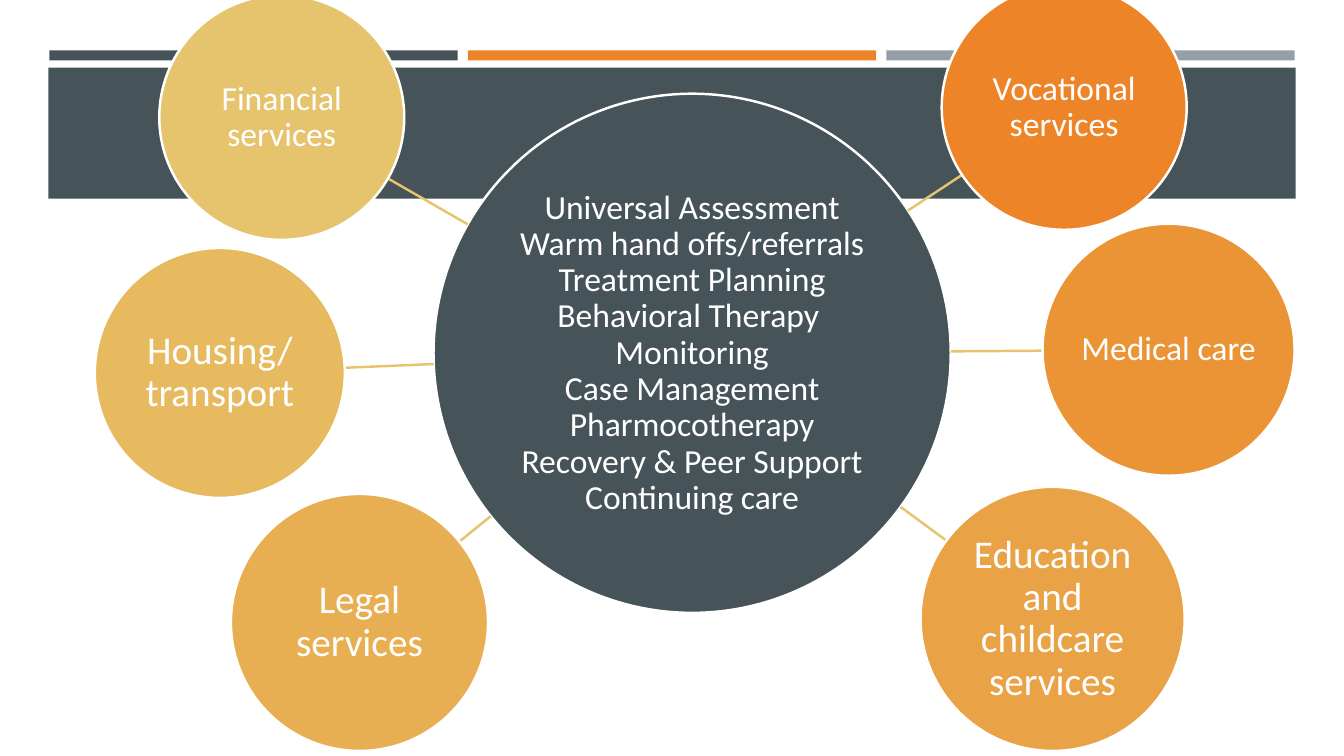
"""Build a slide of support services arranged around a central care hub."""
from dataclasses import dataclass
from math import hypot

from lxml.etree import SubElement
from pptx import Presentation
from pptx.dml.color import RGBColor
from pptx.enum.shapes import MSO_CONNECTOR as Connector, MSO_SHAPE as Preset
from pptx.enum.text import MSO_ANCHOR as Anchor, PP_ALIGN as Align
from pptx.oxml.ns import qn
from pptx.shapes.autoshape import Shape
from pptx.slide import Slide
from pptx.util import Inches, Pt

SLATE, ORANGE, GRAY, GOLD, WHITE = "465359", "ED8428", "969FA7", "E6C46D", "FFFFFF"
OUTLINE = Pt(1.75)
INSET = Inches(0.02)
FRAME_FORMAT = {
    "word_wrap": True,
    "vertical_anchor": Anchor.MIDDLE,
    "margin_left": INSET,
    "margin_right": INSET,
    "margin_top": INSET,
    "margin_bottom": INSET,
}
PARAGRAPH_FORMAT = {"alignment": Align.CENTER, "line_spacing": 0.9}


@dataclass(frozen=True)
class Bubble:
    left: float
    top: float
    width: float
    height: float
    color: str
    size: int
    lines: tuple[str, ...]

    @property
    def center(self) -> tuple[float, float]:
        return self.left + self.width / 2, self.top + self.height / 2

    def edge_toward(self, other: "Bubble") -> tuple[float, float]:
        x, y = self.center
        dx, dy = other.center[0] - x, other.center[1] - y
        reach = hypot(dx / (self.width / 2), dy / (self.height / 2))
        return x + dx / reach, y + dy / reach


def service(left: float, top: float, diameter: float, color: str, size: int, label: str) -> Bubble:
    return Bubble(left, top, diameter, diameter, color, size, (label,))


HUB = Bubble(4.3, 0.93, 5.13, 5.15, SLATE, 24, (
    "Universal Assessment",
    "Warm hand offs/referrals",
    "Treatment Planning",
    "Behavioral Therapy ",
    "Monitoring",
    "Case Management Pharmocotherapy",
    "Recovery & Peer Support",
    "Continuing care",
))
SERVICES = (
    service(9.34, -0.15, 2.43, ORANGE, 24, "Vocational services"),
    service(10.34, 2.22, 2.5, "EB9436", 24, "Medical care"),
    service(9.13, 4.83, 2.62, "E9A245", 28, "Education and childcare services"),
    service(2.29, 4.9, 2.55, "E8AF52", 28, "Legal services"),
    service(0.94, 2.46, 2.48, "E7BA60", 28, "Housing/ transport"),
    service(1.58, -0.05, 2.43, GOLD, 24, "Financial services"),
)


def rgb(color: str) -> RGBColor:
    return RGBColor.from_string(color)


def apply_format(target: object, values: dict[str, object]) -> None:
    for name, value in values.items():
        setattr(target, name, value)


def add_filled(slide: Slide, preset: Preset, left: float, top: float,
               width: float, height: float, color: str) -> Shape:
    shape = slide.shapes.add_shape(
        preset, Inches(left), Inches(top), Inches(width), Inches(height))
    shape.shadow.inherit = False
    shape.fill.solid()
    shape.fill.fore_color.rgb = rgb(color)
    shape.line.fill.background()
    return shape


def add_bubble(slide: Slide, bubble: Bubble) -> None:
    circle = add_filled(slide, Preset.OVAL, bubble.left, bubble.top,
                        bubble.width, bubble.height, bubble.color)
    circle.line.color.rgb = rgb(WHITE)
    circle.line.width = OUTLINE
    frame = circle.text_frame
    apply_format(frame, FRAME_FORMAT)
    for index, line in enumerate(bubble.lines):
        paragraph = frame.add_paragraph() if index else frame.paragraphs[0]
        apply_format(paragraph, PARAGRAPH_FORMAT)
        run = paragraph.add_run()
        run.text = line
        apply_format(run.font, {"name": "Calibri", "size": Pt(bubble.size)})
        run.font.color.rgb = rgb(WHITE)


def add_spoke(slide: Slide, hub: Bubble, satellite: Bubble) -> None:
    ends = (*hub.edge_toward(satellite), *satellite.edge_toward(hub))
    spoke = slide.shapes.add_connector(Connector.STRAIGHT, *map(Inches, ends))
    spoke.line.color.rgb = rgb(GOLD)
    spoke.line.width = OUTLINE
    SubElement(spoke._element.spPr, qn("a:effectLst"))


def main() -> None:
    deck = Presentation()
    apply_format(deck, {"slide_width": Inches(13.33), "slide_height": Inches(7.5)})
    slide = deck.slides.add_slide(deck.slide_layouts[6])
    for column, color in enumerate((SLATE, ORANGE, GRAY)):
        add_filled(slide, Preset.RECTANGLE, 0.49 + 4.15 * column, 0.5, 4.05, 0.1, color)
    add_filled(slide, Preset.RECTANGLE, 0.48, 0.67, 12.37, 1.3, SLATE)
    add_bubble(slide, HUB)
    for satellite in SERVICES:
        add_spoke(slide, HUB, satellite)
        add_bubble(slide, satellite)
    deck.save("out.pptx")


if __name__ == "__main__":
    main()
